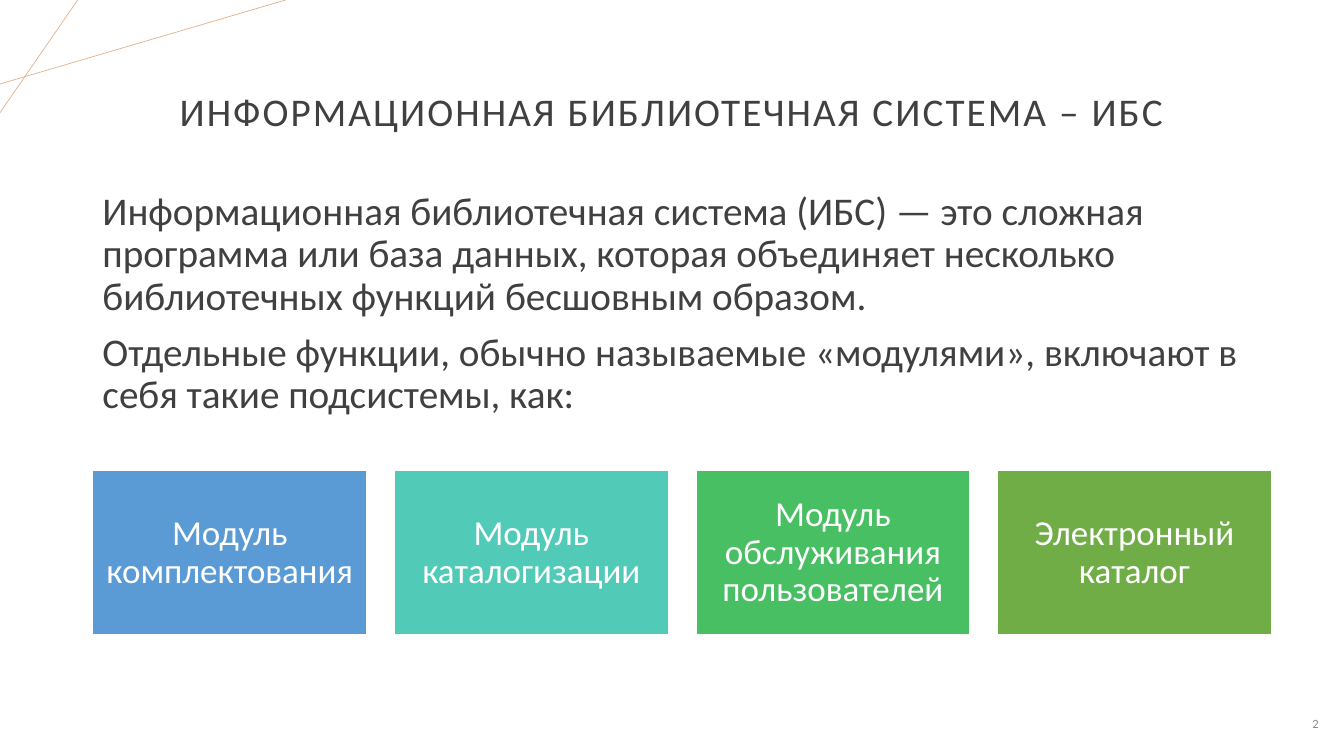
"""Build the slide about the modules of a library information system."""
from typing import Any, NamedTuple

from lxml import etree
from pptx import Presentation, util as u
from pptx.dml import color
from pptx.enum import shapes, text
from pptx.oxml import ns


class Box(NamedTuple):
    left: float
    top: float
    width: float
    height: float


class Card(NamedTuple):
    label: str
    fill: str


class Ray(NamedTuple):
    x1: float
    y1: float
    x2: float
    y2: float


RAYS = [Ray(0, 60, 204, 0), Ray(55.5, 0, 0, 80.5)]
CARDS = [
    Card("Модуль комплектования", "5B9BD5"),
    Card("Модуль каталогизации", "52CAB8"),
    Card("Модуль обслуживания пользователей", "49BF64"),
    Card("Электронный каталог", "70AD47"),
]
FIRST = Box(66.25, 336.25, 195.75, 117.25)
STEP = 215.4
TITLE = "ИНФОРМАЦИОННАЯ БИБЛИОТЕЧНАЯ СИСТЕМА – ИБС"
BODY = [
    "Информационная библиотечная система (ИБС) — это сложная программа или "
    "база данных, которая объединяет несколько библиотечных функций "
    "бесшовным образом.",
    "Отдельные функции, обычно называемые «модулями», включают в себя такие "
    "подсистемы, как:",
]
MID, TOP = text.MSO_ANCHOR.MIDDLE, text.MSO_ANCHOR.TOP
LEFT, MIDDLE, RIGHT = text.PP_ALIGN.LEFT, text.PP_ALIGN.CENTER, text.PP_ALIGN.RIGHT


def apply(item: Any, form: dict[str, Any]) -> None:
    """Set each named value on the item."""
    for name, value in form.items():
        setattr(item, name, value)


def paint(target: Any, tone: str) -> None:
    """Give a font colour or a fill colour its hex value."""
    target.rgb = color.RGBColor.from_string(tone)


def place(shape: Any, box: Box) -> None:
    """Move and size a shape in points."""
    apply(shape, {name: u.Pt(value) for name, value in box._asdict().items()})


def write(shape: Any, lines: list[str], size: float, tone: str, align: Any,
          anchor: Any = MID, gap: float = 0, track: int = 0) -> None:
    """Fill a shape with evenly formatted paragraphs."""
    frame = shape.text_frame
    apply(frame, {"word_wrap": True, "auto_size": text.MSO_AUTO_SIZE.NONE,
                  "vertical_anchor": anchor})
    for i, line in enumerate(lines):
        para = frame.add_paragraph() if i else frame.paragraphs[0]
        props = para._p.get_or_add_pPr()
        apply_xml = {"marL": "0", "indent": "0"}
        props.attrib.update(apply_xml)
        etree.SubElement(props, ns.qn("a:buNone"))
        apply(para, {"alignment": align, "line_spacing": 0.9,
                     "space_before": u.Pt(gap if i else 0)})
        run = para.add_run()
        run.text = line
        apply(run.font, {"name": "Calibri", "size": u.Pt(size)})
        paint(run.font.color, tone)
        if track:
            run._r.get_or_add_rPr().set("spc", str(track))


def draw_ray(slide: Any, ray: Ray) -> None:
    """Draw one thin corner line."""
    line = slide.shapes.add_connector(
        shapes.MSO_CONNECTOR.STRAIGHT, *map(u.Pt, ray))
    line.line.width = u.Pt(0.5)
    line.line.fill.solid()
    paint(line.line.fill.fore_color, "E2B18D")
    etree.SubElement(line._element.spPr, ns.qn("a:effectLst"))


def draw_card(slide: Any, card: Card, box: Box) -> None:
    """Draw one module card with its label."""
    rect = slide.shapes.add_shape(
        shapes.MSO_SHAPE.RECTANGLE, *map(u.Pt, box))
    rect.shadow.inherit = False
    rect.fill.solid()
    paint(rect.fill.fore_color, card.fill)
    rect.line.width = u.Pt(1)
    paint(rect.line.color, "FFFFFF")
    sides = ("left", "top", "right", "bottom")
    apply(rect.text_frame, {f"margin_{side}": u.Pt(7.2) for side in sides})
    write(rect, [card.label], 25, "FFFFFF", MIDDLE)


def main() -> None:
    """Build and save the slide."""
    deck = Presentation()
    apply(deck, {"slide_width": u.Pt(960), "slide_height": u.Pt(540)})
    slide = deck.slides.add_slide(deck.slide_layouts[1])
    for ray in RAYS:
        draw_ray(slide, ray)
    head, body = slide.shapes.title, slide.placeholders[1]
    place(head, Box(66, 28.75, 828, 104.5))
    write(head, [TITLE], 28, "404040", MIDDLE, track=150)
    place(body, Box(66, 133.25, 828, 370))
    write(body, BODY, 28, "404040", LEFT, TOP, gap=10)
    page = slide.shapes.add_textbox(*map(u.Pt, Box(918.75, 503.25, 30.25, 28.75)))
    write(page, ["2"], 9, "8C8C8C", RIGHT)
    for i, card in enumerate(CARDS):
        draw_card(slide, card, FIRST._replace(left=FIRST.left + i * STEP))
    deck.save("out.pptx")


if __name__ == "__main__":
    main()
